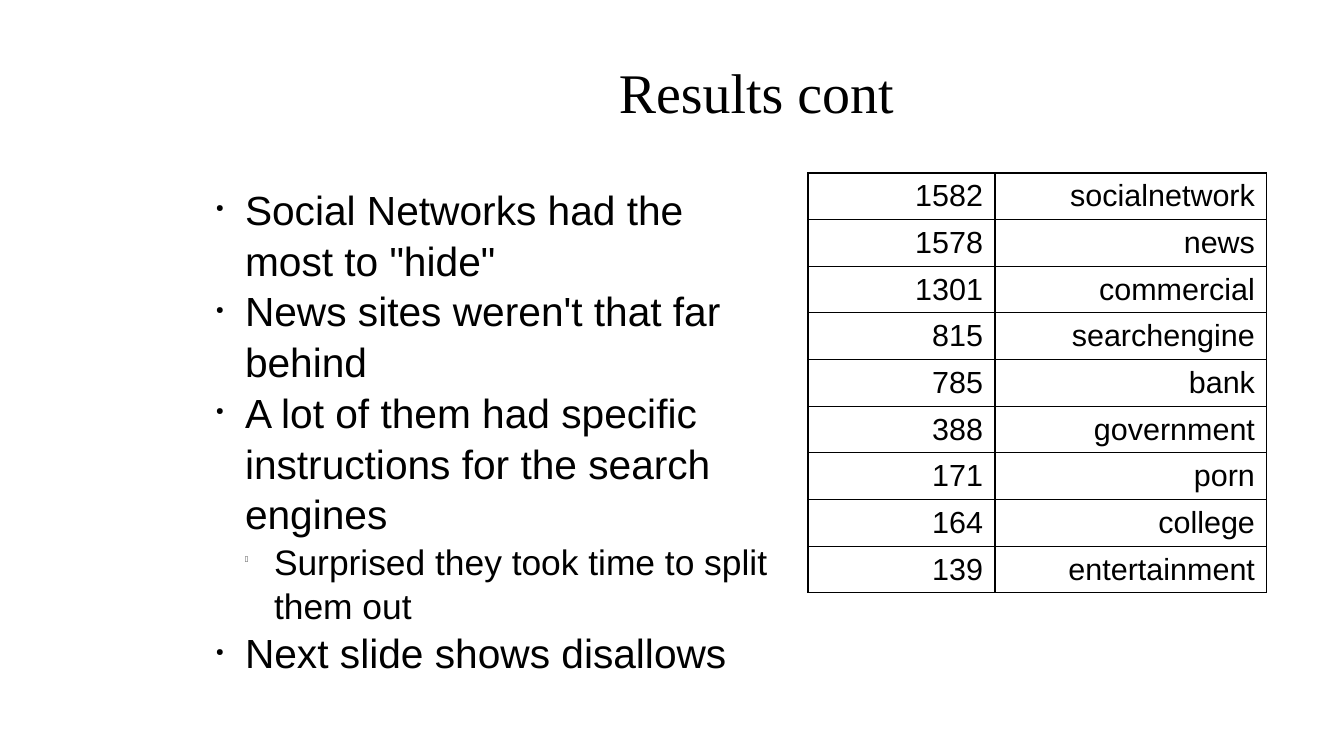
from lxml.etree import SubElement
from pptx import Presentation
from pptx.dml.color import RGBColor
from pptx.enum.text import MSO_ANCHOR as Anchor, PP_ALIGN as Align
from pptx.oxml.ns import qn
from pptx.util import Pt

EMU_PER_PX = 914400 / 122
BLACK = "000000"


def px(n):
    return round(n * EMU_PER_PX)


def color(value):
    return RGBColor.from_string(value)


class SlideBuilder:
    font = "Arial"
    indent = 29

    def __init__(self, slide):
        self.s = slide

    def style(self, p, size, font=None):
        for r in p.runs:
            r.font.size = Pt(size)
            r.font.name = font or self.font
            r.font.color.rgb = color(BLACK)

    def box(self, x, y, w, h):
        tf = self.s.shapes.add_textbox(px(x), px(y), px(w), px(h)).text_frame
        tf.word_wrap = True
        tf.margin_left = tf.margin_top = tf.margin_right = tf.margin_bottom = 0
        return tf

    def title(self, text, x, y, w, h):
        tf = self.box(x, y, w, h)
        tf.vertical_anchor = Anchor.MIDDLE
        tf.text = text
        p = tf.paragraphs[0]
        p.alignment = Align.CENTER
        self.style(p, 33, "Times New Roman")

    def bullets(self, items, x, y, w, h):
        tf = self.box(x, y, w, h)
        tf.text = "\n".join(text for level, text in items)
        for p, (level, text) in zip(tf.paragraphs, items):
            p.level = level
            p.line_spacing = 1.04
            pPr = p._p.get_or_add_pPr()
            pPr.set("marL", str(px(self.indent * (level + 1))))
            pPr.set("indent", str(-px(self.indent)))
            SubElement(pPr, qn("a:buSzPct"), val="25000")
            SubElement(pPr, qn("a:buChar"), char="●📫"[level])
            self.style(p, (24, 20.9)[level])

    def borders(self, cell):
        tcPr = cell._tc.get_or_add_tcPr()
        for side in ("lnL", "lnR", "lnT", "lnB"):
            ln = SubElement(tcPr, qn(f"a:{side}"), w=str(Pt(0.75)))
            fill = SubElement(ln, qn("a:solidFill"))
            SubElement(fill, qn("a:srgbClr"), val=BLACK)

    def table(self, rows, x, y, widths, h):
        frame = self.s.shapes.add_table(
            len(rows), len(widths), px(x), px(y), px(sum(widths)), px(h))
        table = frame.table
        table.first_row = table.horz_banding = False
        for column, width in zip(table.columns, widths):
            column.width = px(width)
        for i, row in enumerate(rows):
            for j, value in enumerate(row):
                cell = table.cell(i, j)
                cell.text = str(value)
                cell.margin_left = cell.margin_right = px(12)
                cell.margin_top = cell.margin_bottom = px(5)
                cell.vertical_anchor = Anchor.MIDDLE
                self.borders(cell)
                cell.fill.background()
                p = cell.text_frame.paragraphs[0]
                p.alignment = Align.RIGHT
                self.style(p, 18)


def main():
    prs = Presentation()
    prs.slide_width, prs.slide_height = px(1344), px(756)
    b = SlideBuilder(prs.slides.add_slide(prs.slide_layouts[6]))

    b.title("Results cont", 216, 29, 1081, 124)
    b.bullets([
        (0, 'Social Networks had the most to "hide"'),
        (0, "News sites weren't that far behind"),
        (0, "A lot of them had specific instructions for the search engines"),
        (1, "Surprised they took time to split them out"),
        (0, "Next slide shows disallows"),
    ], 216, 183, 553, 439)
    b.table([
        (1582, "socialnetwork"),
        (1578, "news"),
        (1301, "commercial"),
        (815, "searchengine"),
        (785, "bank"),
        (388, "government"),
        (171, "porn"),
        (164, "college"),
        (139, "entertainment"),
    ], 808, 173, (187, 272), 420)

    prs.save("out.pptx")


if __name__ == "__main__":
    main()
